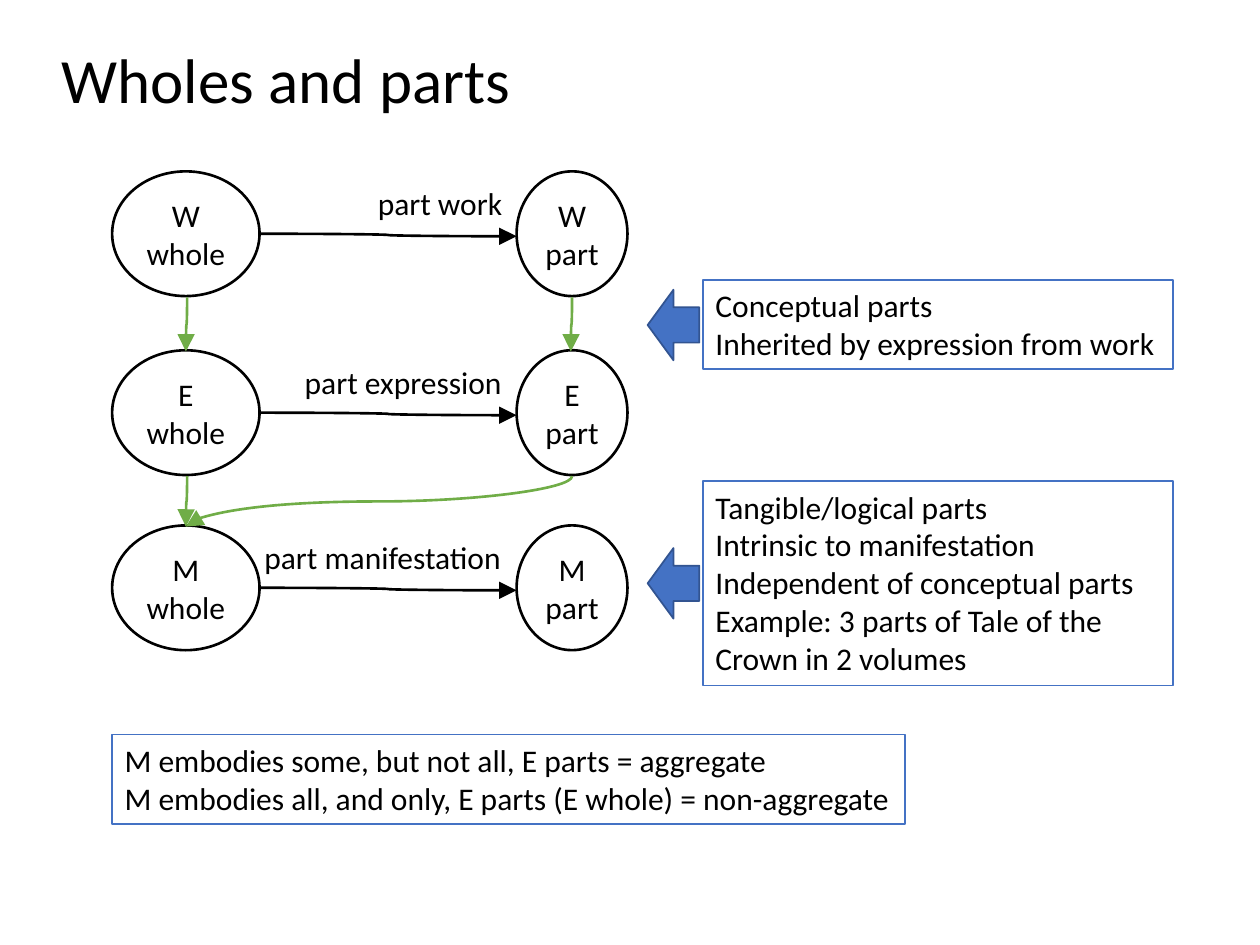
import pptx
import pptx.dml.color
import pptx.enum.shapes
import pptx.enum.text
import pptx.oxml.ns
import pptx.util
from lxml import etree

BLACK, BLUE, DARK_BLUE, GREEN = "000000", "4472C4", "325491", "70AD47"
SHAPE = pptx.enum.shapes.MSO_SHAPE

# Grid of the diagram, in inches: column -> (left, width), level -> top
COLUMNS = {"whole": (0.89, 1.17), "part": (4.1, 0.88)}
LEVELS = {"W": 1.36, "E": 2.78, "M": 4.17}
NODE_HEIGHT = 0.99
RELATIONS = {"W": ("part work", 1.2), "E": ("part expression", 1.78),
             "M": ("part manifestation", 2.1)}
NOTE_LEFT, NOTE_WIDTH = 5.58, 3.73


def inches(*lengths):
    return [pptx.util.Inches(length) for length in lengths]


def paint(color_format, color):
    color_format.rgb = pptx.dml.color.RGBColor.from_string(color)


def outline(item, color, width):
    item.line.fill.solid()
    paint(item.line.color, color)
    item.line.width = pptx.util.Pt(width)


def write(frame, text, size=18, align=None, wrap=False):
    frame.text = text
    frame.word_wrap = wrap
    for paragraph in frame.paragraphs:
        paragraph.alignment = align
        for run in paragraph.runs:
            run.font.name = "Calibri"
            run.font.size = pptx.util.Pt(size)
            paint(run.font.color, BLACK)


def add_text(slide, box, text, size=18, border=None, wrap=False):
    label = slide.shapes.add_textbox(*inches(*box))
    write(label.text_frame, text, size, wrap=wrap)
    label.text_frame.auto_size = pptx.enum.text.MSO_AUTO_SIZE.SHAPE_TO_FIT_TEXT
    if border:
        outline(label, border, 1)


def add_node(slide, level, column):
    left, width = COLUMNS[column]
    node = slide.shapes.add_shape(
        SHAPE.OVAL, *inches(left, LEVELS[level], width, NODE_HEIGHT))
    node.shadow.inherit = False
    node.fill.background()
    outline(node, BLACK, 1.5)
    write(node.text_frame, f"{level}\n{column}",
          align=pptx.enum.text.PP_ALIGN.CENTER)
    node.text_frame.vertical_anchor = pptx.enum.text.MSO_ANCHOR.MIDDLE


def add_curve(slide, start, end, color, downward=False):
    """Curved arrow; a downward one is a sideways curve turned by 90 degrees."""
    (x1, y1), (x2, y2) = start, end
    if downward:
        x_mid, y_mid = (x1 + x2) / 2, (y1 + y2) / 2
        half_run, half_rise = (y2 - y1) / 2, (x1 - x2) / 2
        x1, x2 = x_mid - half_run, x_mid + half_run
        y1, y2 = y_mid - half_rise, y_mid + half_rise
    curve = slide.shapes.add_connector(
        pptx.enum.shapes.MSO_CONNECTOR.CURVE, *inches(x1, y1, x2, y2))
    outline(curve, color, 1.5)
    qn = pptx.oxml.ns.qn
    properties = curve._element.spPr
    if downward:
        properties.find(qn("a:xfrm")).set("rot", "5400000")
    etree.SubElement(properties.find(qn("a:ln")), qn("a:tailEnd"),
                     type="triangle", w="lg", len="lg")
    etree.SubElement(properties, qn("a:effectLst"))


def add_pointer(slide, top):
    pointer = slide.shapes.add_shape(
        SHAPE.LEFT_ARROW, *inches(5.14, top, 0.41, 0.56))
    pointer.shadow.inherit = False
    pointer.fill.solid()
    paint(pointer.fill.fore_color, BLUE)
    outline(pointer, DARK_BLUE, 1)


def main():
    deck = pptx.Presentation()
    deck.slide_width, deck.slide_height = inches(10, 7.5)
    slide = deck.slides.add_slide(deck.slide_layouts[6])

    add_text(slide, (0.39, 0.27, 3.79, 0.71), "Wholes and parts", size=36)

    # Each level: whole, part and the relation between them
    whole_left, whole_width = COLUMNS["whole"]
    part_left, part_width = COLUMNS["part"]
    for level, top in LEVELS.items():
        for column in COLUMNS:
            add_node(slide, level, column)
        middle = top + NODE_HEIGHT / 2
        add_curve(slide, (whole_left + whole_width, middle),
                  (part_left, middle + 0.02), BLACK)
        relation, width = RELATIONS[level]
        add_text(slide, (part_left - width, top + 0.05, width, 0.4), relation)

    # Arrows from one level down to the next
    whole_x = whole_left + whole_width / 2
    part_x = part_left + part_width / 2
    for upper, lower, start_x, end_x in (
            ("W", "E", whole_x + 0.01, whole_x),
            ("W", "E", part_x, part_x - 0.01),
            ("E", "M", whole_x + 0.01, whole_x),
            ("E", "M", part_x, whole_x)):
        add_curve(slide, (start_x, LEVELS[upper] + NODE_HEIGHT + 0.01),
                  (end_x, LEVELS[lower] + 0.01), GREEN, downward=True)

    # Notes on the two kinds of parts
    add_text(slide, (NOTE_LEFT, 2.22, NOTE_WIDTH, 0.71),
             "Conceptual parts\nInherited by expression from work",
             border=BLUE)
    add_text(slide, (NOTE_LEFT, 3.82, NOTE_WIDTH, 1.62),
             "Tangible/logical parts\nIntrinsic to manifestation\n"
             "Independent of conceptual parts\n"
             "Example: 3 parts of Tale of the Crown in 2 volumes",
             border=BLUE, wrap=True)
    for top in (2.3, 4.35):
        add_pointer(slide, top)

    # Conclusion
    add_text(slide, (whole_left, 5.83, 6.29, 0.71),
             "M embodies some, but not all, E parts = aggregate\n"
             "M embodies all, and only, E parts (E whole) = non-aggregate",
             border=BLUE)

    deck.save("out.pptx")


if __name__ == "__main__":
    main()
